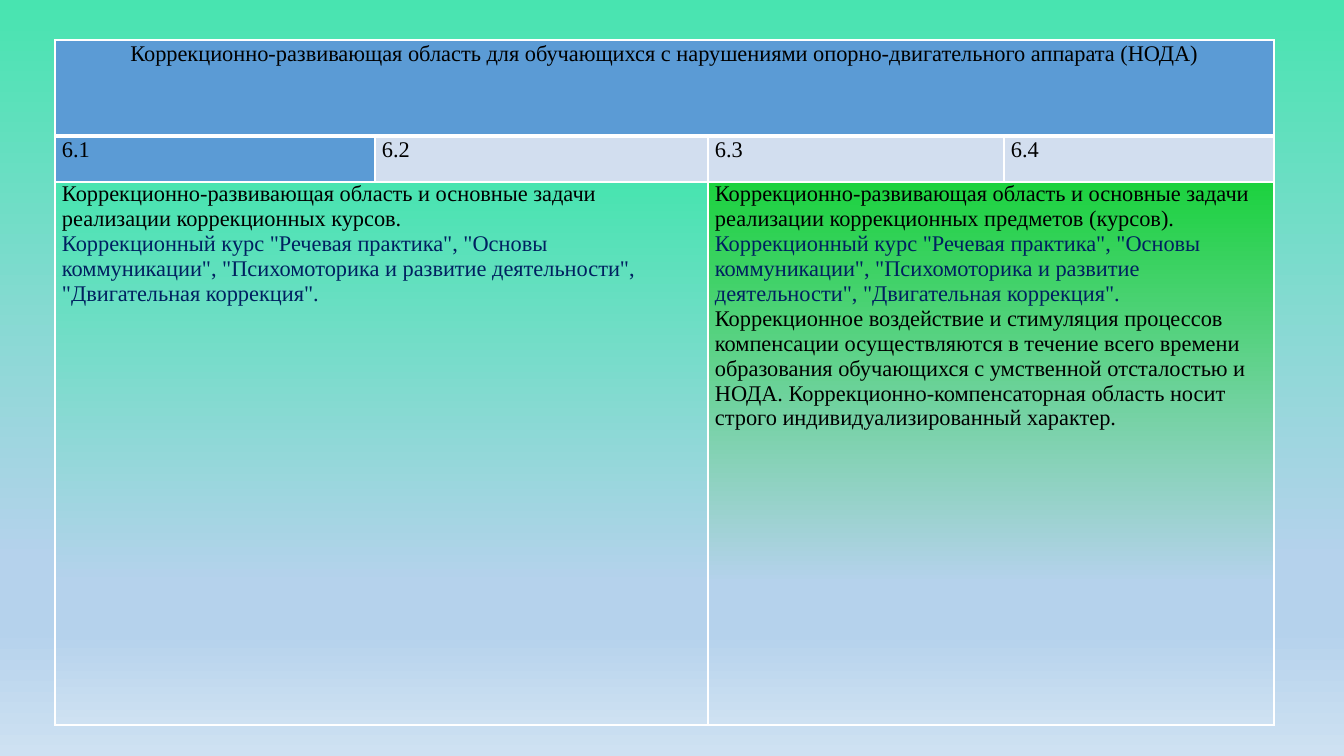
"""Build a slide with a table of the correctional and developmental area."""
import pptx
import pptx.dml.color
import pptx.enum.text
import pptx.oxml
import pptx.oxml.ns
import pptx.util

COURSES = ('Коррекционный курс "Речевая практика", "Основы коммуникации", '
           '"Психомоторика и развитие деятельности", "Двигательная коррекция".')
HEADING = ("Коррекционно-развивающая область для обучающихся с нарушениями "
           "опорно-двигательного аппарата (НОДА)")
EARLY_YEARS = [
    ("Коррекционно-развивающая область и основные задачи реализации "
     "коррекционных курсов.", "text"),
    (COURSES, "accent"),
]
LATER_YEARS = [
    ("Коррекционно-развивающая область и основные задачи реализации "
     "коррекционных предметов (курсов).", "text"),
    (COURSES, "accent"),
    ("Коррекционное воздействие и стимуляция процессов компенсации "
     "осуществляются в течение всего времени образования обучающихся с "
     "умственной отсталостью и НОДА. Коррекционно-компенсаторная область "
     "носит строго индивидуализированный характер.", "text"),
]
VARIANTS = [("6.1", "header"), ("6.2", "band"), ("6.3", "band"), ("6.4", "band")]

GRADIENT_TAIL = [(74, "B5D2EC"), (83, "B5D2EC"), (100, "CEE1F2")]
THEME = {
    "font": "Times New Roman", "size": 16,
    "text": "000000", "accent": "002060", "border": "FFFFFF",
    "header": "5B9BD5", "band": "D2DEEF",
    "mint": [(0, "48E4B0")] + GRADIENT_TAIL,
    "green": [(0, "1CD23F")] + GRADIENT_TAIL,
    "line": 1, "heading_line": 3, "spacing": 1.07,
}

CELLS = [(0, 0, 4, [(HEADING, "text")], "header")]
CELLS += [(1, column, 1, [(name, "text")], fill)
          for column, (name, fill) in enumerate(VARIANTS)]
CELLS += [(2, 0, 2, EARLY_YEARS, "mint"), (2, 2, 2, LATER_YEARS, "green")]

SLIDE_SIZE = (1344, 756)
TABLE_ORIGIN = (55, 40)
COLUMNS = [320, 333, 296, 270]
ROWS = [96, 46, 543]
INSET = 7
EMU_PER_PX = 914400 / 100.8


def px(length):
    return pptx.util.Emu(round(length * EMU_PER_PX))


def color(name):
    return pptx.dml.color.RGBColor.from_string(THEME[name])


def set_gradient(fill, element, stops):
    fill.solid()
    solid = element.find(".//" + pptx.oxml.ns.qn("a:solidFill"))
    stop_xml = "".join(
        f'<a:gs pos="{position * 1000}"><a:srgbClr val="{value}"/></a:gs>'
        for position, value in stops)
    gradient = pptx.oxml.parse_xml(
        f'<a:gradFill {pptx.oxml.ns.nsdecls("a")} rotWithShape="1">'
        f'<a:gsLst>{stop_xml}</a:gsLst><a:lin ang="5400000" scaled="0"/></a:gradFill>')
    solid.getparent().replace(solid, gradient)


def set_borders(cell, bottom, top):
    properties = cell._tc.get_or_add_tcPr()
    widths = [("lnL", THEME["line"]), ("lnR", THEME["line"]), ("lnT", top), ("lnB", bottom)]
    for index, (side, width) in enumerate(widths):
        properties.insert(index, pptx.oxml.parse_xml(
            f'<a:{side} {pptx.oxml.ns.nsdecls("a")} w="{pptx.util.Pt(width)}">'
            f'<a:solidFill><a:srgbClr val="{THEME["border"]}"/></a:solidFill></a:{side}>'))


def fill_cell(cell, paragraphs, fill, spacing, alignment):
    cell.margin_left = cell.margin_right = px(INSET)
    cell.margin_top = cell.margin_bottom = 0
    cell.text_frame.text = "\n".join(text for text, _ in paragraphs)
    for paragraph, (_, tint) in zip(cell.text_frame.paragraphs, paragraphs):
        paragraph.alignment = alignment
        paragraph.line_spacing = spacing
        font = paragraph.runs[0].font
        font.name = THEME["font"]
        font.size = pptx.util.Pt(THEME["size"])
        font.color.rgb = color(tint)
    if isinstance(THEME[fill], list):
        set_gradient(cell.fill, cell._tc.tcPr, THEME[fill])
    else:
        cell.fill.solid()
        cell.fill.fore_color.rgb = color(fill)


def add_courses_table(slide):
    frame = slide.shapes.add_table(len(ROWS), len(COLUMNS), *map(
        px, (*TABLE_ORIGIN, sum(COLUMNS), sum(ROWS))))
    table = frame.table
    table.first_row = table.horz_banding = False
    for column, width in zip(table.columns, COLUMNS):
        column.width = px(width)
    for row, height in zip(table.rows, ROWS):
        row.height = px(height)
    for row, column, span, paragraphs, fill in CELLS:
        cell = table.cell(row, column)
        if span > 1:
            cell.merge(table.cell(row, column + span - 1))
        fill_cell(cell, paragraphs, fill,
                  THEME["spacing"] if len(paragraphs) == 1 else 1.0,
                  pptx.enum.text.PP_ALIGN.CENTER if row == 0 else pptx.enum.text.PP_ALIGN.LEFT)
    for row in range(len(ROWS)):
        for column in range(len(COLUMNS)):
            set_borders(table.cell(row, column),
                        THEME["heading_line"] if row == 0 else THEME["line"],
                        THEME["heading_line"] if row == 1 else THEME["line"])


def main():
    presentation = pptx.Presentation()
    presentation.slide_width, presentation.slide_height = map(px, SLIDE_SIZE)
    slide = presentation.slides.add_slide(presentation.slide_layouts[6])
    set_gradient(slide.background.fill, slide.element, THEME["mint"])
    add_courses_table(slide)
    presentation.save("out.pptx")


if __name__ == "__main__":
    main()
